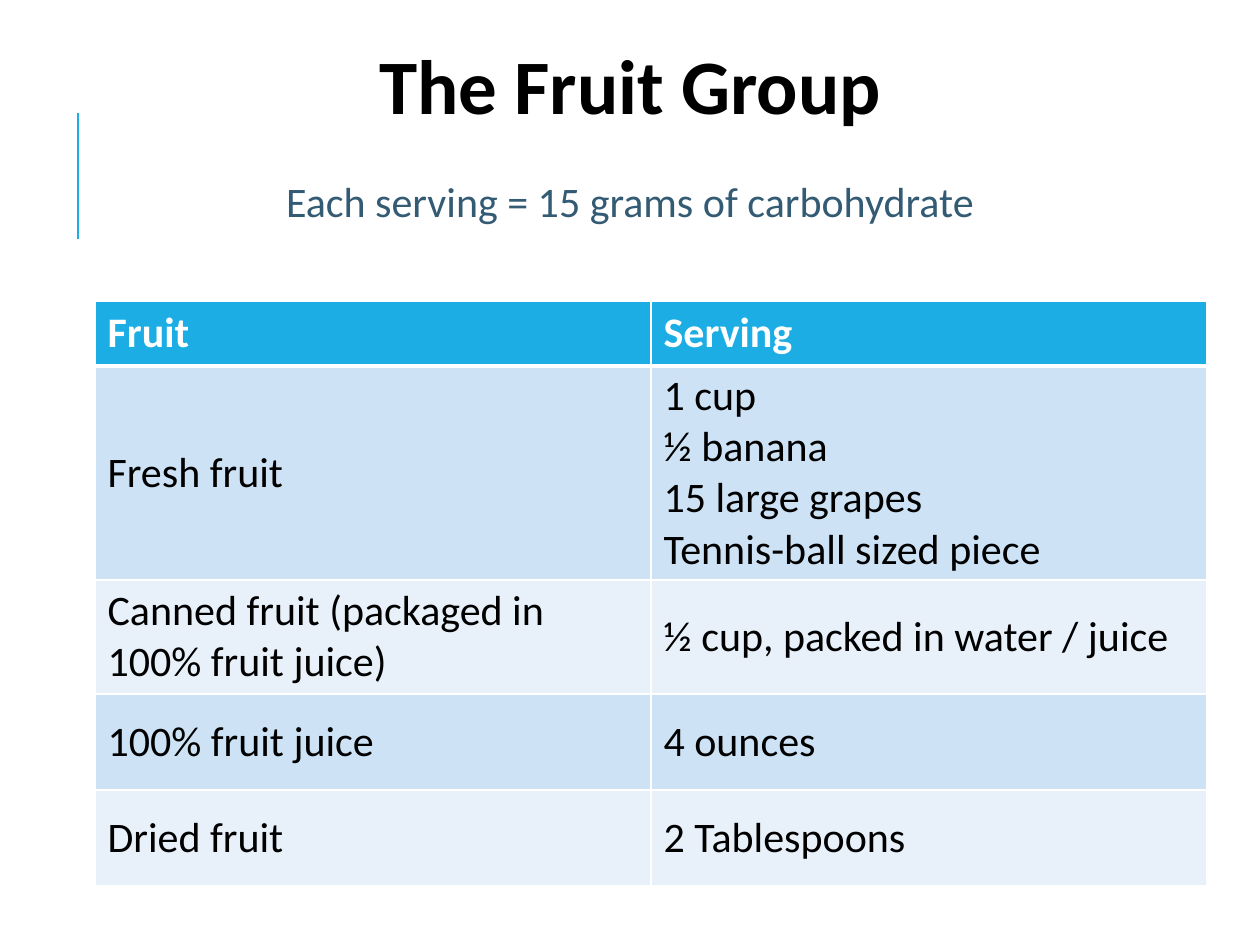
import pptx
import pptx.util
import pptx.dml.color
import pptx.enum.text
import pptx.enum.shapes
import pptx.oxml.ns
from lxml import etree

# Content
TITLE = "The Fruit Group"
NOTE = "Each serving = 15 grams of carbohydrate"
ROWS = [
    ("Fruit", "Serving"),
    ("Fresh fruit", "1 cup\n½ banana\n15 large grapes\nTennis-ball sized piece"),
    ("Canned fruit (packaged in 100% fruit juice)", "½ cup, packed in water / juice"),
    ("100% fruit juice", "4 ounces"),
    ("Dried fruit", "2 Tablespoons"),
]
HIGHS = [65, 214, 114, 96, 96]
BANDS = ["E8F1FA", "CDE3F5"]
BLUE, WHITE, BLACK, SLATE = "1CADE4", "FFFFFF", "000000", "335B74"
FONT = "Calibri"
MID = pptx.enum.text.MSO_ANCHOR.MIDDLE
CENTER = pptx.enum.text.PP_ALIGN.CENTER


def px(n):
    return pptx.util.Emu(round(n * 914400 / 126))


def color(code):
    return pptx.dml.color.RGBColor.from_string(code)


def style(frame, size, code, bold=False):
    for para in frame.paragraphs:
        for run in para.runs:
            run.font.name = FONT
            run.font.size = pptx.util.Pt(size)
            run.font.bold = bold
            run.font.color.rgb = color(code)


def label(text, box, size, code, bold=False):
    frame = slide.shapes.add_textbox(*map(px, box)).text_frame
    frame.word_wrap = True
    frame.text = text
    frame.paragraphs[0].alignment = CENTER
    style(frame, size, code, bold)
    return frame


def border(cell, widths):
    props = cell._tc.get_or_add_tcPr()
    for i, (side, width) in enumerate(widths.items()):
        line = etree.Element(pptx.oxml.ns.qn("a:ln" + side), w=str(pptx.util.Pt(width)))
        fill = etree.SubElement(line, pptx.oxml.ns.qn("a:solidFill"))
        etree.SubElement(fill, pptx.oxml.ns.qn("a:srgbClr"), val=WHITE)
        props.insert(i, line)


deck = pptx.Presentation()
deck.slide_width, deck.slide_height = px(1260), px(945)
slide = deck.slides.add_slide(deck.slide_layouts[6])

# Accent line
rule = slide.shapes.add_connector(
    pptx.enum.shapes.MSO_CONNECTOR.STRAIGHT, px(78), px(239), px(78), px(113))
rule.line.color.rgb = color(BLUE)
rule.line.width = pptx.util.Pt(1.5)
etree.SubElement(rule._element.spPr, pptx.oxml.ns.qn("a:effectLst"))

# Title and note
label(TITLE, (53, 21, 1155, 126), 44, BLACK, True).vertical_anchor = MID
label(NOTE, (0, 179, 1260, 54), 24, SLATE).paragraphs[0].line_spacing = 0.8

# Table
table = slide.shapes.add_table(
    len(ROWS), 2, px(95), px(301), px(1112), px(sum(HIGHS))).table
for r, (row, high) in enumerate(zip(ROWS, HIGHS)):
    table.rows[r].height = px(high)
    head = r == 0
    for c, text in enumerate(row):
        cell = table.cell(r, c)
        cell.text_frame.text = text
        cell.vertical_anchor = MID
        cell.margin_top = cell.margin_bottom = px(4)
        cell.fill.solid()
        cell.fill.fore_color.rgb = color(BLUE if head else BANDS[r % 2])
        style(cell.text_frame, 24, WHITE if head else BLACK, head)
        border(cell, {"L": 1, "R": 1, "T": 3 if r == 1 else 1, "B": 3 if head else 1})

deck.save("out.pptx")
